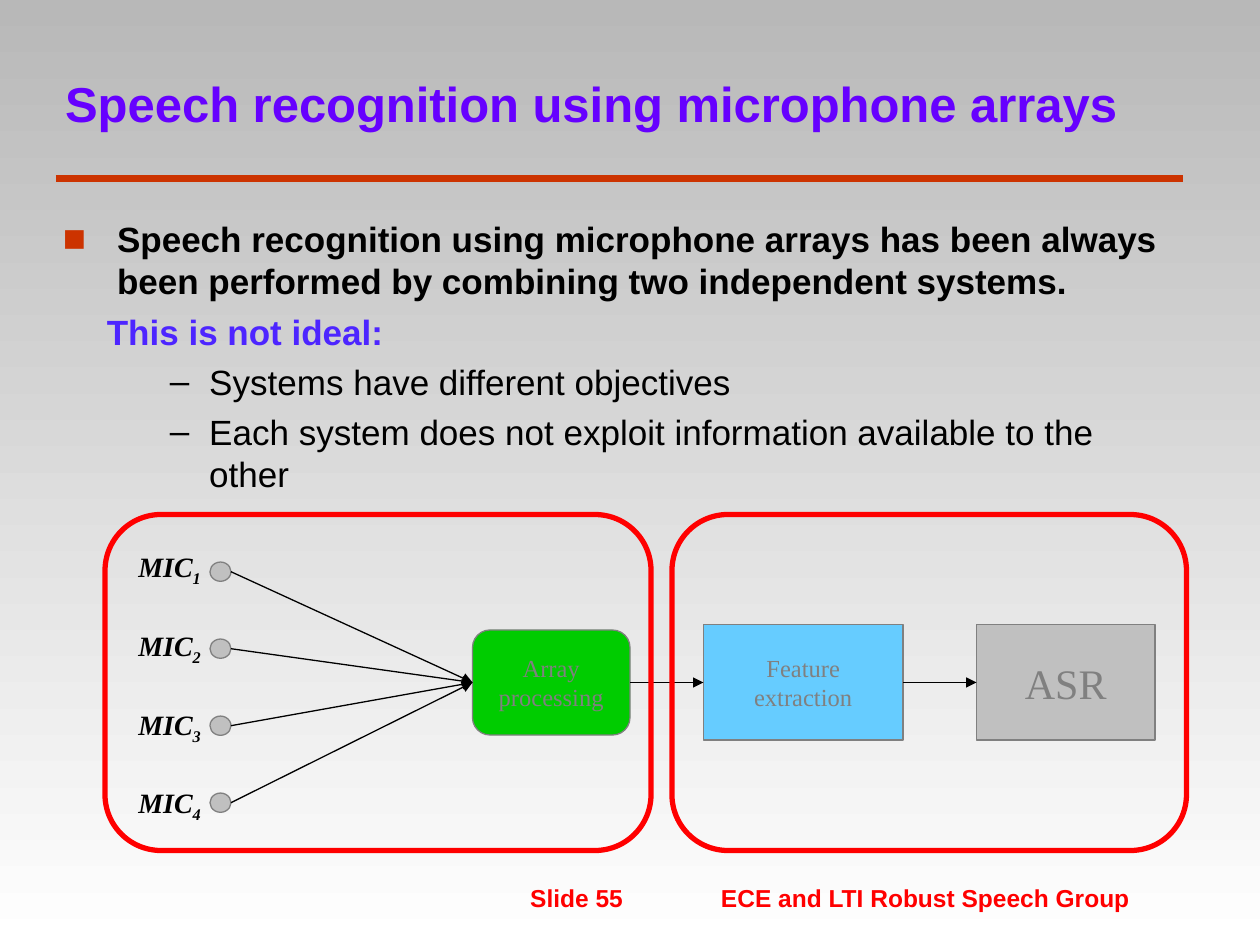
from dataclasses import dataclass

from lxml import etree
from pptx import Presentation
from pptx.dml.color import RGBColor
from pptx.enum.shapes import MSO_CONNECTOR, MSO_SHAPE
from pptx.enum.text import MSO_ANCHOR, PP_ALIGN
from pptx.oxml.ns import qn
from pptx.util import Pt

RECTANGLE = MSO_SHAPE.RECTANGLE
ROUNDED = MSO_SHAPE.ROUNDED_RECTANGLE
OVAL = MSO_SHAPE.OVAL
STRAIGHT = MSO_CONNECTOR.STRAIGHT
TOP, MIDDLE, BOTTOM = MSO_ANCHOR.TOP, MSO_ANCHOR.MIDDLE, MSO_ANCHOR.BOTTOM
LEFT, CENTER = PP_ALIGN.LEFT, PP_ALIGN.CENTER
TITLE_ONLY = 5
INSETS = (7.2, 3.6, 7.2, 3.6)


@dataclass(frozen=True)
class Theme:
    sans: str = "Arial"
    serif: str = "Times New Roman"
    title_size: int = 28
    body_size: int = 20
    large_size: int = 24
    mic_size: int = 16
    small_size: int = 14
    black: str = "000000"
    gray: str = "808080"
    silver: str = "C0C0C0"
    title: str = "6600FF"
    accent: str = "CC3300"
    remark: str = "4D25FF"
    red: str = "FF0000"
    green: str = "00CC00"
    sky: str = "66CCFF"
    background_top: str = "B8B8B8"
    background_bottom: str = "FFFFFF"


def rgb(value):
    return RGBColor.from_string(value)


def add_text(paragraph, text, *, size, color, font, bold=False, italic=False, baseline=0):
    """Append a run; baseline is the shift in percent, negative for subscript."""
    run = paragraph.add_run()
    run.text = text
    run.font.name = font
    run.font.size = Pt(size)
    run.font.bold = bold
    run.font.italic = italic
    run.font.color.rgb = rgb(color)
    if baseline:
        run.font._element.set("baseline", str(baseline * 1000))


def indent(paragraph, left, hanging, bullet=None, color=None, percent=100):
    properties = paragraph._p.get_or_add_pPr()
    properties.set("marL", str(Pt(left)))
    properties.set("indent", str(-Pt(hanging)))
    if bullet is None:
        etree.SubElement(properties, qn("a:buNone"))
        return
    if color:
        holder = etree.SubElement(properties, qn("a:buClr"))
        etree.SubElement(holder, qn("a:srgbClr"), val=color)
    etree.SubElement(properties, qn("a:buSzPct"), val=str(percent * 1000))
    etree.SubElement(properties, qn("a:buFont"), typeface="Arial")
    etree.SubElement(properties, qn("a:buChar"), char=bullet)


def add_tab_stop(paragraph, position):
    tabs = etree.SubElement(paragraph._p.get_or_add_pPr(), qn("a:tabLst"))
    etree.SubElement(tabs, qn("a:tab"), pos=str(Pt(position)), algn="l")


class SlideBuilder:
    """Holds the theme and the slide; lengths are in points."""

    def __init__(self, slide, theme):
        self.slide = slide
        self.theme = theme

    def background(self):
        fill = self.slide.background.fill
        fill.gradient()
        fill.gradient_angle = 270
        colors = (self.theme.background_top, self.theme.background_bottom)
        for stop, color in zip(fill.gradient_stops, colors):
            stop.color.rgb = rgb(color)

    def frame(self, shape, insets=INSETS, anchor=TOP, wrap=True):
        frame = shape.text_frame
        frame.word_wrap = wrap
        frame.vertical_anchor = anchor
        (frame.margin_left, frame.margin_top,
         frame.margin_right, frame.margin_bottom) = map(Pt, insets)
        return frame

    def title(self, text, left, top, width, height):
        shape = self.slide.shapes.title
        shape.left, shape.top, shape.width, shape.height = map(Pt, (left, top, width, height))
        paragraph = self.frame(shape, (7.2, 0, 7.2, 0), BOTTOM).paragraphs[0]
        paragraph.alignment = LEFT
        add_text(paragraph, text, size=self.theme.title_size, color=self.theme.title,
                 font=self.theme.sans, bold=True)

    def text_box(self, left, top, width, height, insets=INSETS):
        box = self.slide.shapes.add_textbox(*map(Pt, (left, top, width, height)))
        return self.frame(box, insets)

    def shape(self, kind, left, top, width, height, fill=None, line=None, weight=0.75):
        shape = self.slide.shapes.add_shape(kind, *map(Pt, (left, top, width, height)))
        shape.shadow.inherit = False
        if fill:
            shape.fill.solid()
            shape.fill.fore_color.rgb = rgb(fill)
        else:
            shape.fill.background()
        shape.line.color.rgb = rgb(line or self.theme.gray)
        shape.line.width = Pt(weight)
        return shape

    def block(self, kind, left, top, width, height, fill, lines, size):
        frame = self.frame(self.shape(kind, left, top, width, height, fill),
                           anchor=MIDDLE, wrap=False)
        for index, text in enumerate(lines):
            paragraph = frame.add_paragraph() if index else frame.paragraphs[0]
            paragraph.alignment = CENTER
            add_text(paragraph, text, size=size, color=self.theme.gray, font=self.theme.serif)

    def line(self, start, end, color, weight, arrow=False):
        connector = self.slide.shapes.add_connector(STRAIGHT, *map(Pt, (*start, *end)))
        connector.line.color.rgb = rgb(color)
        connector.line.width = Pt(weight)
        if arrow:
            etree.SubElement(connector.line._get_or_add_ln(), qn("a:tailEnd"), type="triangle")
        etree.SubElement(connector._element.spPr, qn("a:effectLst"))

    def arrow(self, start, end):
        self.line(start, end, self.theme.black, 0.75, arrow=True)

    def microphone(self, number, top, label_top, target):
        theme = self.theme
        self.shape(OVAL, 120, top, 12, 11, theme.silver)
        self.arrow((132, top + 5.5), target)
        paragraph = self.text_box(72, label_top, 60, 26.5).paragraphs[0]
        style = dict(size=theme.mic_size, color=theme.black, font=theme.serif,
                     bold=True, italic=True)
        add_text(paragraph, "MIC", **style)
        add_text(paragraph, str(number), baseline=-25, **style)


def add_body(builder):
    theme = builder.theme
    style = dict(size=theme.body_size, font=theme.sans)

    statement = builder.text_box(28.8, 120.5, 648, 54).paragraphs[0]
    indent(statement, 31, 31, "■", theme.accent, 110)
    add_text(statement, "Speech recognition using microphone arrays has been always "
             "been performed by combining two independent systems.",
             color=theme.black, bold=True, **style)

    frame = builder.text_box(54, 174, 612, 96)
    remark = frame.paragraphs[0]
    indent(remark, 18.7, 18.7)
    add_text(remark, "This is not ideal:", color=theme.remark, bold=True, **style)
    for reason in ("Systems have different objectives",
                   "Each system does not exploit information available to the other"):
        paragraph = frame.add_paragraph()
        paragraph.level = 1
        paragraph.space_before = Pt(4.5)
        indent(paragraph, 58.5, 22.5, "–")
        add_text(paragraph, reason, color=theme.black, **style)


def add_diagram(builder):
    theme = builder.theme
    middle = 390
    builder.block(RECTANGLE, 558, 357, 102, 66, theme.silver, ["ASR"], theme.large_size)
    builder.block(RECTANGLE, 402, 357, 114, 66, theme.sky,
                  ["Feature", "extraction"], theme.small_size)
    builder.block(ROUNDED, 270, 360, 90, 60, theme.green,
                  ["Array", "processing"], theme.small_size)
    for start, end in ((516, 558), (360, 402)):
        builder.arrow((start, middle), (end, middle))
    for index in range(4):
        builder.microphone(index + 1, 321.2 + 44 * index, 310.5 + 45 * index, (270, middle))
    for left, width in ((60, 312), (384, 294)):
        builder.shape(ROUNDED, left, 294, width, 192, line=theme.red, weight=3)


def add_footer(builder):
    theme = builder.theme
    paragraph = builder.text_box(102, 492.5, 582, 36, (201, 12, 7.2, 3.6)).paragraphs[0]
    add_tab_stop(paragraph, 109)
    add_text(paragraph, "Slide 55\tECE and LTI Robust Speech Group",
             size=theme.small_size, color=theme.red, font=theme.sans, bold=True)


def main():
    presentation = Presentation()
    presentation.slide_width, presentation.slide_height = Pt(720), Pt(540)
    slide = presentation.slides.add_slide(presentation.slide_layouts[TITLE_ONLY])
    builder = SlideBuilder(slide, Theme())
    builder.background()
    builder.line((32, 102), (676, 102), builder.theme.accent, 4)
    builder.title("Speech recognition using microphone arrays", 30, 27.4, 648, 48)
    add_body(builder)
    add_diagram(builder)
    add_footer(builder)
    presentation.save("out.pptx")


if __name__ == "__main__":
    main()
